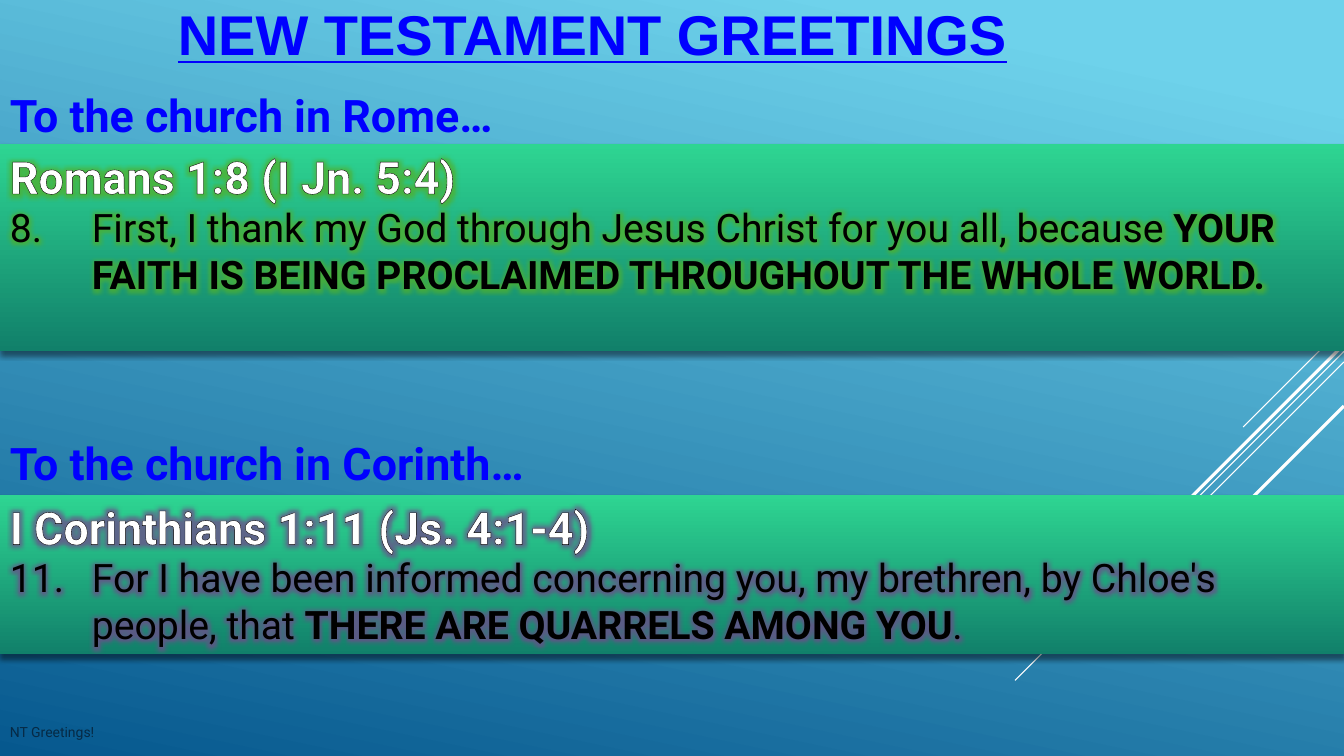
import pptx
import pptx.util
import pptx.dml.color
import pptx.enum.shapes
import pptx.enum.text
from lxml import etree
from pptx.util import Pt

A = "http://schemas.openxmlformats.org/drawingml/2006/main"


def color(hex_string):
    return pptx.dml.color.RGBColor.from_string(hex_string)


def add_xml(parent, xml, index=None):
    element = etree.fromstring(xml.replace(">", f' xmlns:a="{A}">', 1))
    parent.insert(len(parent) if index is None else index, element)


deck = pptx.Presentation()
deck.slide_width, deck.slide_height = Pt(960), Pt(540)
slide = deck.slides.add_slide(deck.slide_layouts[6])

# Background
backdrop = slide.background.fill
backdrop.gradient()
backdrop.gradient_angle = 258
for stop, position, shade in zip(backdrop.gradient_stops, (0.1, 1), ("6ED2EB", "06588E")):
    stop.position, stop.color.rgb = position, color(shade)

# Diagonal rays from the right edge: start height, run, weight
for top, run, weight in ((233, 72, 0.75), (251, 235, 0.75), (258.5, 149, 0.75),
                         (246, 137.5, 2.25), (290, 100, 2.25)):
    ray = slide.shapes.add_connector(pptx.enum.shapes.MSO_CONNECTOR.STRAIGHT,
                                     Pt(960), Pt(top), Pt(960 - run), Pt(top + run))
    ray.line.color.rgb = color("FFFFFF")
    ray.line.width = Pt(weight)
    add_xml(ray._element.spPr, "<a:effectLst></a:effectLst>")

# Title, church headings and footer: text, left, top, width, height, font, size, colour
for text, left, top, width, height, face, size, ink in (
        ("NEW TESTAMENT GREETINGS", 120, 0, 720, 48, "Arial", 40, "0000FF"),
        ("To the church in Rome…", 0, 59, 960, 46, "Roboto", 32, "0000FF"),
        ("To the church in Corinth…", 0, 307.5, 960, 46, "Roboto", 32, "0000FF"),
        ("NT Greetings!", 0, 512, 240, 22, "Roboto", 10, "062A45")):
    label = slide.shapes.add_textbox(Pt(left), Pt(top), Pt(width), Pt(height)).text_frame
    label.word_wrap = True
    label.vertical_anchor = pptx.enum.text.MSO_ANCHOR.MIDDLE
    line = label.paragraphs[0]
    line.text = text
    line.font.name, line.font.size = face, Pt(size)
    line.font.color.rgb = color(ink)
    line.font.bold = size > 10
    line.font.underline = size == 40

# Scripture panels: top, height, glow, reference, verse runs (text, emphasised)
panels = (
    (103, 147.5, "4EB030", "Romans 1:8 (I Jn. 5:4)",
     (("8.\tFirst, I thank my God through Jesus Christ for you all, because ", False),
      ("YOUR FAITH IS BEING PROCLAIMED THROUGHOUT THE WHOLE WORLD.", True))),
    (353.5, 114, "6B4F8A", "I Corinthians 1:11 (Js. 4:1-4)",
     (("11.\tFor I have been informed concerning you, my brethren, by Chloe's people, that ", False),
      ("THERE ARE QUARRELS AMONG YOU", True), (".", False))),
)
for top, height, glow, reference, verse in panels:
    panel = slide.shapes.add_shape(pptx.enum.shapes.MSO_SHAPE.RECTANGLE,
                                   0, Pt(top), Pt(960), Pt(height))
    panel.fill.gradient()
    panel.fill.gradient_angle = 270
    for stop, position, shade in zip(panel.fill.gradient_stops, (0, 1), ("2ED592", "11806A")):
        stop.position, stop.color.rgb = position, color(shade)
    panel.line.fill.background()
    add_xml(panel._element.spPr,
            '<a:effectLst><a:outerShdw blurRad="50800" dist="38100" dir="5400000" rotWithShape="0">'
            '<a:srgbClr val="000000"><a:alpha val="46000"/></a:srgbClr></a:outerShdw></a:effectLst>')

    passage = panel.text_frame
    passage.word_wrap = True
    passage.vertical_anchor = pptx.enum.text.MSO_ANCHOR.TOP
    for runs, size, ink, edge, hang in (
            (((reference, True),), 32, "FFFFFF", "000000", 36),
            (verse, 28, "000000", "507E0E", 58.5)):
        line = passage.paragraphs[0] if size == 32 else passage.add_paragraph()
        line.alignment = pptx.enum.text.PP_ALIGN.LEFT
        line.font.name, line.font.size = "Roboto", Pt(size)
        line.font.color.rgb = color(ink)
        indent = line._p.get_or_add_pPr()
        indent.set("marL", str(Pt(hang)))
        indent.set("indent", str(-Pt(hang)))
        for text, emphasised in runs:
            words = line.add_run()
            words.text = text
            words.font.bold = emphasised
            words.font.color.rgb = color(ink)
            style = words.font._element
            if emphasised:
                add_xml(style, f'<a:ln w="9525"><a:solidFill><a:srgbClr val="{edge}"/>'
                               '</a:solidFill></a:ln>', 0)
            add_xml(style, f'<a:effectLst><a:glow rad="139700"><a:srgbClr val="{glow}">'
                           '<a:alpha val="80000"/></a:srgbClr></a:glow></a:effectLst>')

deck.save("out.pptx")
